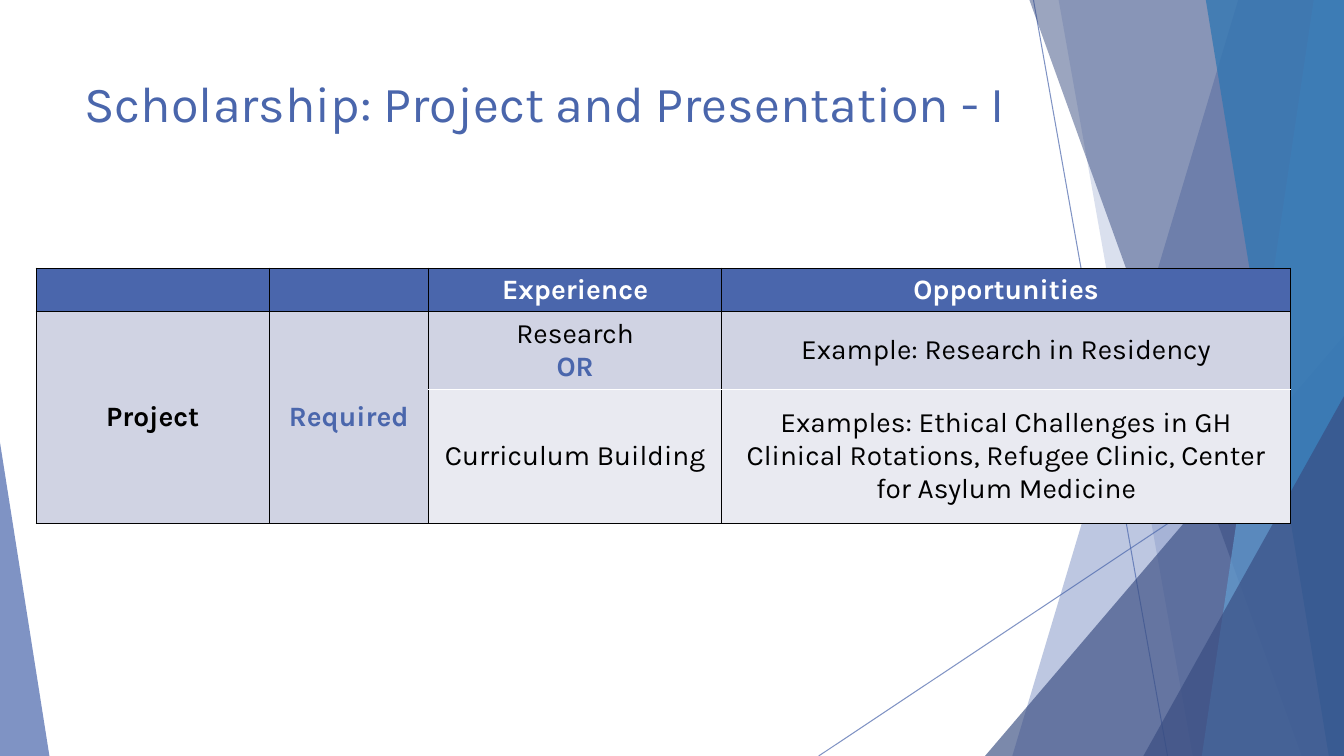
"""Build the scholarship slide: faceted backdrop, title and project table."""
from lxml import etree
from pptx import Presentation
from pptx import util as u
from pptx.dml.color import RGBColor
from pptx.enum import shapes, text
from pptx.oxml.ns import qn

WIDTH, HEIGHT = 13.33, 7.5
FONT = "Karla"
BLUE = RGBColor(0x4A, 0x66, 0xAC)
NAVY = RGBColor(0x38, 0x4C, 0x81)
SKY = RGBColor(0x62, 0x9D, 0xD1)
OCEAN = RGBColor(0x34, 0x77, 0xB2)
BAND = RGBColor(0xD0, 0xD3, 0xE3)
PALE = RGBColor(0xE9, 0xEA, 0xF1)
BLACK = RGBColor(0, 0, 0)
WHITE = RGBColor(255, 255, 255)

TITLE = "Scholarship: Project and Presentation - I"
TITLE_BOX = (0.74, 0.67, 9.4, 1.44)

RAYS = [((10.25, 0), (11.58, HEIGHT)), ((WIDTH, 4.03), (8.12, HEIGHT))]
# Facets: top x and bottom x of the slanted edge; triangles: left, top, width, apex.
FACETS = [
    ("facet", (12.28, 10.04), BLUE, 36),
    ("facet", (10.5, 11.83), BLUE, 20),
    ("triangle", (9.77, 3.33, 3.56, 1), NAVY, 66),
    ("facet", (10.21, 12.91), NAVY, 50),
    ("facet", (13.03, 11.92), SKY, 70),
    ("facet", (11.96, 13.18), OCEAN, 80),
    ("triangle", (11.34, 3.93, 1.99, 1), NAVY, 66),
    ("triangle", (0, 4.39, 0.49, 0), BLUE, 70),
]

TABLE_LEFT, TABLE_TOP = 0.36, 2.66
COLUMNS = [2.31, 1.58, 2.91, 5.64]
ROWS = [0.43, 0.75, 1.33]
CELLS = {
    (0, 2): [("Experience", WHITE, True)],
    (0, 3): [("Opportunities", WHITE, True)],
    (1, 0): [("Project", BLACK, True)],
    (1, 1): [("Required", BLUE, True)],
    (1, 2): [("Research", BLACK, False), ("OR", BLUE, True)],
    (1, 3): [("Example: Research in Residency", BLACK, False)],
    (2, 2): [("Curriculum Building", BLACK, False)],
    (2, 3): [("Examples: Ethical Challenges in GH Clinical Rotations, "
              "Refugee Clinic, Center for Asylum Medicine", BLACK, False)],
}
ROW_FILLS = [BLUE, BAND, PALE]
MERGED_COLUMNS = (0, 1)


def inches(values):
    return [u.Inches(value) for value in values]


def set_alpha(item, percent):
    for color in item._element.spPr.iter(qn("a:srgbClr")):
        etree.SubElement(color, qn("a:alpha"), val=str(percent * 1000))


def style_span(para, words, size, color, bold=False):
    span = para.add_run()
    span.text = words
    span.font.color.rgb = color
    for name, value in dict(name=FONT, size=u.Pt(size), bold=bold).items():
        setattr(span.font, name, value)


def add_ray(page, start, end):
    ray = page.shapes.add_connector(
        shapes.MSO_CONNECTOR.STRAIGHT, *inches(start + end))
    ray.line.color.rgb, ray.line.width = BLUE, u.Pt(0.75)
    set_alpha(ray, 70)
    etree.SubElement(ray._element.spPr, qn("a:effectLst"))


def add_facet(page, kind, geometry, color, alpha):
    if kind == "triangle":
        left, top, width, apex = geometry
        facet = page.shapes.add_shape(
            shapes.MSO_SHAPE.ISOSCELES_TRIANGLE,
            *inches((left, top, width, HEIGHT - top)))
        facet.adjustments[0] = apex
    else:
        top_x, bottom_x = geometry
        builder = page.shapes.build_freeform(u.Inches(top_x), 0)
        corners = [(WIDTH, 0), (WIDTH, HEIGHT), (bottom_x, HEIGHT)]
        builder.add_line_segments([inches(corner) for corner in corners])
        facet = builder.convert_to_shape()
    facet.shadow.inherit = False
    facet.fill.solid()
    facet.fill.fore_color.rgb = color
    facet.line.fill.background()
    set_alpha(facet, alpha)


def add_title(page):
    box = page.shapes.add_textbox(*inches(TITLE_BOX))
    box.text_frame.word_wrap = True
    style_span(box.text_frame.paragraphs[0], TITLE, 36, BLUE)


def add_border(cell, side, color):
    edge = etree.SubElement(
        cell._tc.get_or_add_tcPr(), qn(f"a:ln{side}"), w=str(u.Pt(1)))
    fill = etree.SubElement(edge, qn("a:solidFill"))
    etree.SubElement(fill, qn("a:srgbClr"), val=str(color))


def style_cell(cell, row, column):
    merged = column in MERGED_COLUMNS
    inner_side = {1: "B", 2: "T"}.get(row)
    for side in "LRTB":
        soft = side == inner_side and not merged
        add_border(cell, side, WHITE if soft else BLACK)
    cell.fill.solid()
    cell.fill.fore_color.rgb = ROW_FILLS[min(row, 1) if merged else row]
    cell.vertical_anchor = text.MSO_ANCHOR.MIDDLE
    for index, (words, color, bold) in enumerate(CELLS.get((row, column), [])):
        frame = cell.text_frame
        para = frame.add_paragraph() if index else frame.paragraphs[0]
        para.alignment = text.PP_ALIGN.CENTER
        style_span(para, words, 20, color, bold)


def add_project_table(page):
    bounds = (TABLE_LEFT, TABLE_TOP, sum(COLUMNS), sum(ROWS))
    table = page.shapes.add_table(
        len(ROWS), len(COLUMNS), *inches(bounds)).table
    table.horz_banding = False
    for column, width in zip(table.columns, COLUMNS):
        column.width = u.Inches(width)
    for row, height in zip(table.rows, ROWS):
        row.height = u.Inches(height)
    for column in MERGED_COLUMNS:
        table.cell(1, column).merge(table.cell(2, column))
    for row in range(len(ROWS)):
        for column in range(len(COLUMNS)):
            style_cell(table.cell(row, column), row, column)


def main():
    deck = Presentation()
    deck.slide_width, deck.slide_height = inches((WIDTH, HEIGHT))
    page = deck.slides.add_slide(deck.slide_layouts[6])
    for start, end in RAYS:
        add_ray(page, start, end)
    for facet in FACETS:
        add_facet(page, *facet)
    add_title(page)
    add_project_table(page)
    deck.save("out.pptx")


if __name__ == "__main__":
    main()
